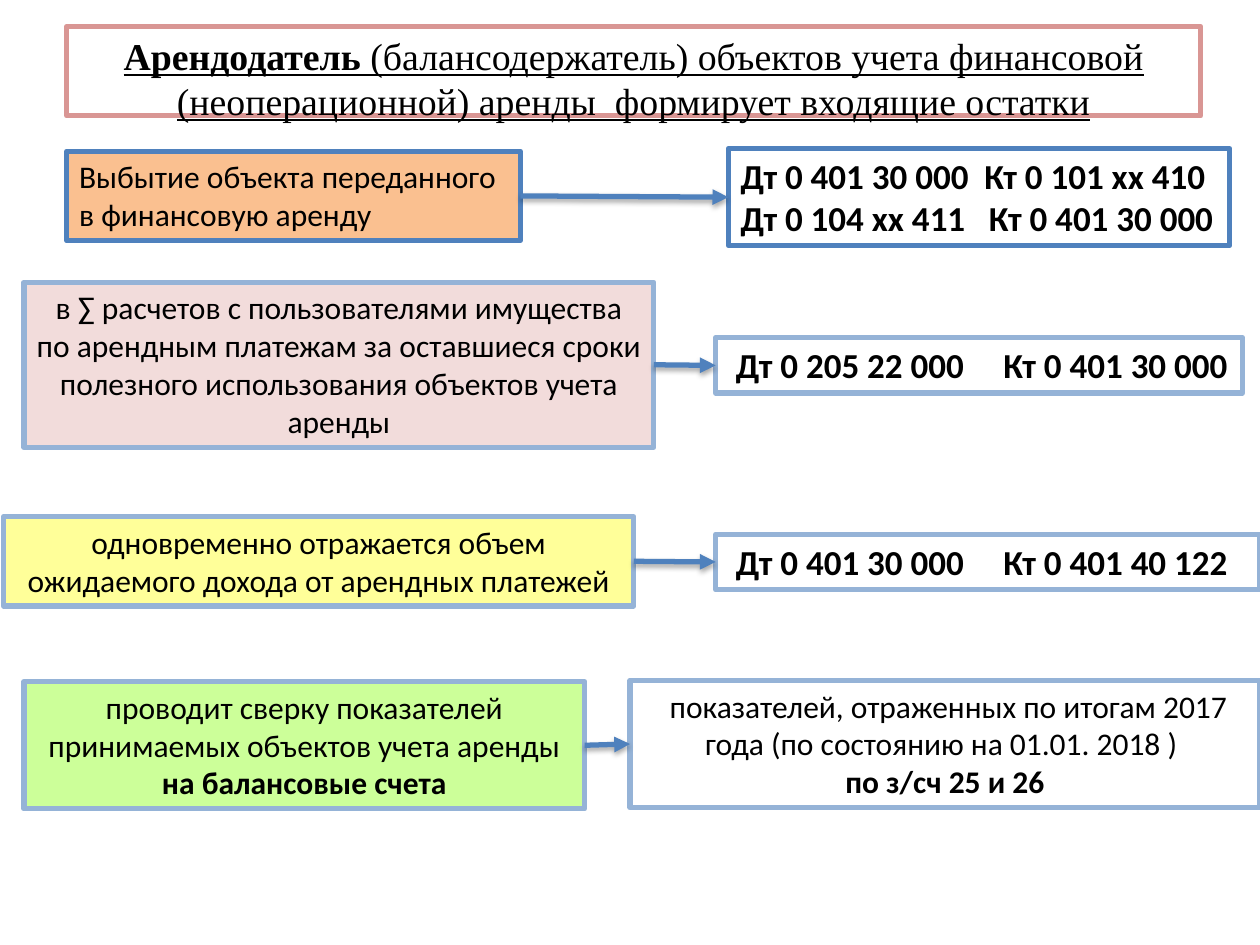
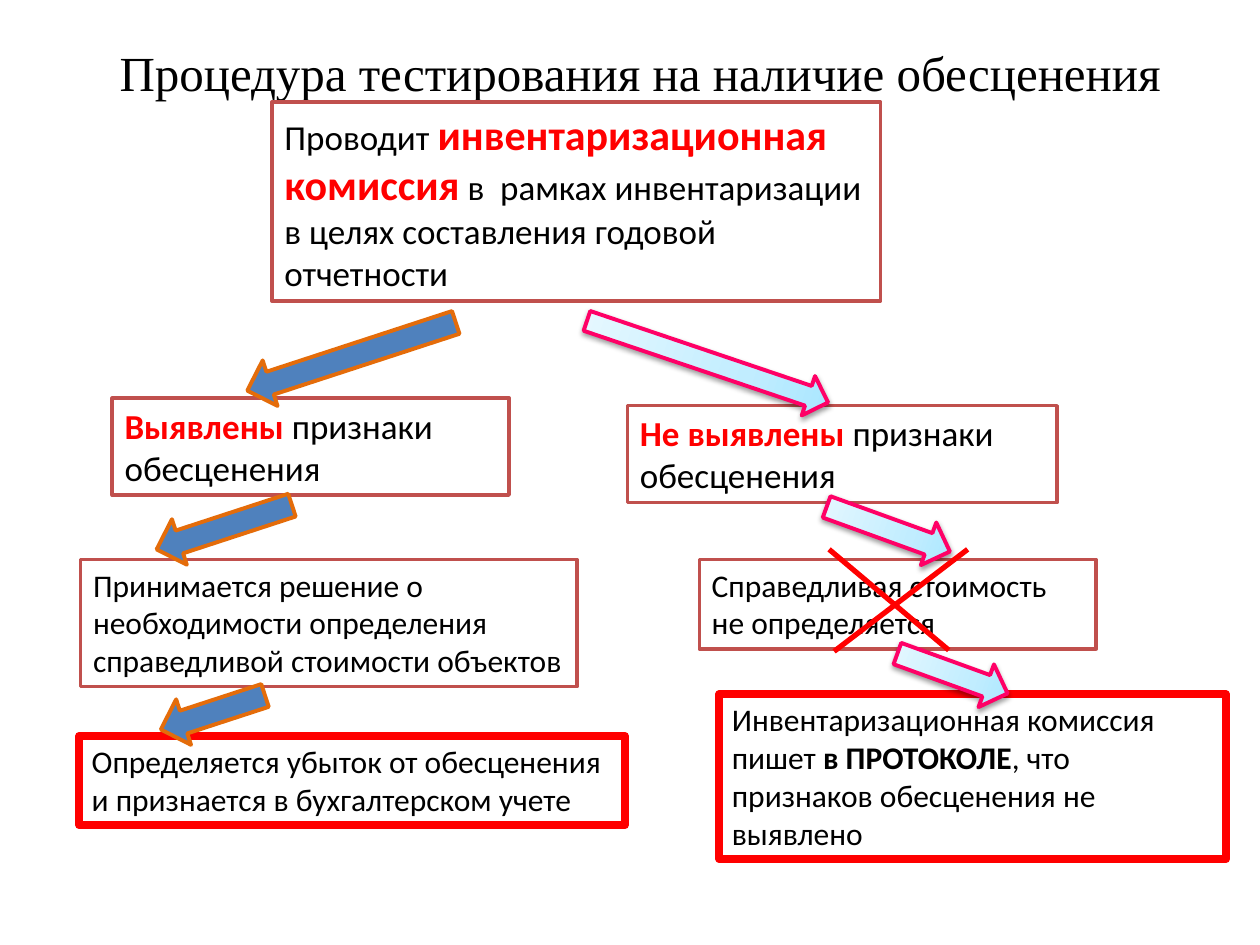
import lxml.etree
import pptx
import pptx.dml.color
import pptx.enum.shapes
import pptx.enum.text
import pptx.oxml.ns
import pptx.util

SLIDE_WIDTH = pptx.util.Inches(10)
SLIDE_HEIGHT = pptx.util.Inches(7.5)
COLUMN = SLIDE_WIDTH / 100
ROW = SLIDE_HEIGHT / 75

BODY_FONT, TITLE_FONT = "Calibri", "Times New Roman"
BLACK, WHITE, RED = "000000", "FFFFFF", "FF0000"
BLUE, PALE_BLUE, ROSE, BRICK = "4F81BD", "95B3D7", "D99694", "C0504D"
ORANGE, PINK = "E46C0A", "FF0066"
SKY_STOPS = ((0, "A7E6FF"), (35, "C1EDFF"), (100, "E7F8FF"))

# Run formats: bold and colour, with an optional size
STRONG = {"bold": True}
ALERT = {"bold": True, "color": RED}
BIG_ALERT = {"bold": True, "color": RED, "size": 24}

CENTER = pptx.enum.text.PP_ALIGN.CENTER
LEFT = pptx.enum.text.PP_ALIGN.LEFT
qn = pptx.oxml.ns.qn


def rgb(color):
    return pptx.dml.color.RGBColor.from_string(color)


def columns(count):
    return round(count * COLUMN)


def rows(count):
    return round(count * ROW)


def frame(place):
    """Turn (column, row, width, height) into lengths."""
    left, top, width, height = place
    return columns(left), rows(top), columns(width), rows(height)


def set_fill(shape, color):
    if color:
        shape.fill.solid()
        shape.fill.fore_color.rgb = rgb(color)
    else:
        shape.fill.background()


def set_line(shape, color, width):
    shape.line.color.rgb = rgb(color)
    shape.line.width = pptx.util.Pt(width)


def set_gradient(shape, stops):
    shape.fill.gradient()
    shape.fill.gradient_angle = 90
    stop_list = shape.element.spPr.find(".//" + qn("a:gsLst"))
    stop_list.clear()
    for position, color in stops:
        stop = lxml.etree.SubElement(stop_list, qn("a:gs"), pos=str(position * 1000))
        lxml.etree.SubElement(stop, qn("a:srgbClr"), val=color)


def set_effects(shape, shadow, opacity=35, distance=1.8):
    """Give a shape its own effect list, with a soft shadow below if asked."""
    properties = shape.element.spPr
    for old_list in properties.findall(qn("a:effectLst")):
        properties.remove(old_list)
    effects = lxml.etree.SubElement(properties, qn("a:effectLst"))
    if shadow:
        outer = lxml.etree.SubElement(
            effects, qn("a:outerShdw"), blurRad=str(pptx.util.Pt(3.1)),
            dist=str(pptx.util.Pt(distance)), dir="5400000", rotWithShape="0")
        color = lxml.etree.SubElement(outer, qn("a:srgbClr"), val=BLACK)
        lxml.etree.SubElement(color, qn("a:alpha"), val=str(opacity * 1000))


def write_text(shape, paragraphs, size, align=LEFT, font=BODY_FONT, bold=False,
               underline=False, wrap=True):
    """Each paragraph is a list of plain strings or (string, format) pairs."""
    text_frame = shape.text_frame
    text_frame.auto_size = pptx.enum.text.MSO_AUTO_SIZE.NONE
    text_frame.word_wrap = wrap
    text_frame.vertical_anchor = pptx.enum.text.MSO_ANCHOR.TOP
    for index, parts in enumerate(paragraphs):
        paragraph = text_frame.add_paragraph() if index else text_frame.paragraphs[0]
        paragraph.alignment = align
        paragraph.font.name = font
        paragraph.font.size = pptx.util.Pt(size)
        paragraph.font.bold = bold
        paragraph.font.underline = underline
        paragraph.font.color.rgb = rgb(BLACK)
        for part in parts:
            text, style = (part, {}) if isinstance(part, str) else part
            run = paragraph.add_run()
            run.text = text
            if "bold" in style:
                run.font.bold = style["bold"]
            if "color" in style:
                run.font.color.rgb = rgb(style["color"])
            if "size" in style:
                run.font.size = pptx.util.Pt(style["size"])


def add_titled_slide(presentation, place, parts, size, underline=False):
    slide = presentation.slides.add_slide(presentation.slide_layouts[5])
    title = slide.shapes.title
    title.left, title.top, title.width, title.height = frame(place)
    write_text(title, [parts], size, CENTER, TITLE_FONT, underline=underline)
    return slide


def add_box(slide, place, paragraphs, size=18, fill=None, line=PALE_BLUE,
            line_width=3, **text_options):
    box = slide.shapes.add_shape(
        pptx.enum.shapes.MSO_SHAPE.RECTANGLE, *frame(place))
    box.shadow.inherit = False
    set_fill(box, fill)
    set_line(box, line, line_width)
    write_text(box, paragraphs, size, **text_options)
    return box


def add_line(slide, start, end, color, shadow=False):
    line = slide.shapes.add_connector(
        pptx.enum.shapes.MSO_CONNECTOR.STRAIGHT,
        columns(start[0]), rows(start[1]), columns(end[0]), rows(end[1]))
    set_line(line, color, 3)
    set_effects(line, shadow)
    return line


def join_boxes(slide, source, target):
    arrow = add_line(slide, (0, 0), (1, 1), BLUE, shadow=True)
    arrow.begin_connect(source, 3)
    arrow.end_connect(target, 1)
    lxml.etree.SubElement(arrow.line._get_or_add_ln(), qn("a:tailEnd"), type="triangle")


def add_block_arrow(slide, place, rotation, line, stops=None):
    """A turned down arrow: blue, or with a gradient and a shadow."""
    arrow = slide.shapes.add_shape(
        pptx.enum.shapes.MSO_SHAPE.DOWN_ARROW, *frame(place))
    arrow.rotation = rotation
    if stops:
        set_gradient(arrow, stops)
    else:
        set_fill(arrow, BLUE)
    set_line(arrow, line, 2.25)
    set_effects(arrow, shadow=bool(stops), opacity=38, distance=1.6)


def build_entries_slide(presentation):
    place = (5.3, 2.1, 90, 7.1)
    slide = add_titled_slide(
        presentation, place,
        [("Арендодатель", STRONG),
         " (балансодержатель) объектов учета финансовой (неоперационной) аренды  "
         "формирует входящие остатки"],
        21.6, underline=True)
    set_line(slide.shapes.title, ROSE, 3)

    # Each operation on the left leads to its entry on the right
    operations = [
        add_box(slide, (5.3, 12, 36, 7.1),
                [["Выбытие объекта переданного в финансовую аренду"]],
                fill="FAC090", line=BLUE),
        add_box(slide, (1.9, 22.4, 50, 13.1),
                [["в ∑ расчетов с пользователями имущества по арендным платежам за "
                  "оставшиеся сроки полезного использования объектов учета аренды"]],
                fill="F2DCDB", align=CENTER),
        add_box(slide, (0.3, 41, 50, 7.1),
                [["одновременно отражается объем ожидаемого дохода от арендных платежей"]],
                fill="FFFF99", align=CENTER),
        add_box(slide, (1.9, 54.1, 44.5, 10.1),
                [["проводит сверку показателей принимаемых объектов учета аренды ",
                  ("на балансовые счета", STRONG)]],
                fill="CCFF99", align=CENTER),
    ]
    entries = [
        add_box(slide, (57.8, 11.8, 39.8, 7.7),
                [["Дт 0 401 30 000  Кт 0 101 хх 410"],
                 ["Дт 0 104 хх 411   Кт 0 401 30 000"]],
                size=20, line=BLUE, bold=True, wrap=False),
        add_box(slide, (56.8, 26.8, 41.8, 4.4),
                [[" Дт 0 205 22 000     Кт 0 401 30 000"]], size=20, bold=True),
        add_box(slide, (56.8, 42.4, 43.2, 4.4),
                [[" Дт 0 401 30 000     Кт 0 401 40 122"]], size=20, bold=True),
        add_box(slide, (50, 54, 50, 10.1),
                [[" показателей, отраженных по итогам 2017 года "
                  "(по состоянию на 01.01. 2018 ) "],
                 [("по з/сч 25 и 26", STRONG)]], align=CENTER),
    ]
    for operation, entry in zip(operations, entries):
        join_boxes(slide, operation, entry)


def build_impairment_slide(presentation):
    slide = add_titled_slide(
        presentation, (7.5, 2.9, 86.6, 4.1),
        ["Процедура тестирования на наличие обесценения"], 28)

    # Steps of the procedure: place, text size, runs
    steps = [
        ((21.6, 8.1, 48.3, 15.8), 20,
         ["Проводит ", ("инвентаризационная комиссия", BIG_ALERT),
          " в  рамках инвентаризации в целях составления годовой отчетности"]),
        ((8.9, 31.6, 31.5, 7.7), 20,
         [("Выявлены", ALERT), " признаки обесценения"]),
        ((49.8, 32.2, 34.1, 7.7), 20,
         [("Не выявлены ", ALERT), "признаки обесценения"]),
        ((6.4, 44.4, 39.4, 10.1), 18,
         ["Принимается решение о необходимости определения справедливой "
          "стоимости объектов"]),
        ((55.5, 44.4, 31.5, 7.1), 18,
         ["Справедливая стоимость не определяется"]),
    ]
    for place, size, parts in steps:
        add_box(slide, place, [parts], size, WHITE, BRICK, 2)

    # Outcomes of both branches
    outcomes = [
        ((6.3, 58.4, 43.3, 7.1),
         ["Определяется убыток от обесценения и признается в бухгалтерском учете"]),
        ((57.1, 55.1, 40.2, 13.1),
         ["Инвентаризационная комиссия пишет ", ("в ПРОТОКОЛЕ", STRONG),
          ", что признаков обесценения не выявлено"]),
    ]
    for place, parts in outcomes:
        add_box(slide, place, [parts], 18, WHITE, RED, 4.5)

    # Arrows of the left and right branches
    for place in ((26, 19.6, 3.8, 17.4), (15.9, 36.2, 3.8, 11.3), (15, 52.2, 3.8, 8.7)):
        add_block_arrow(slide, place, 71.9, ORANGE)
    for place, rotation in (((54.5, 18.6, 3.3, 20.2), 288.7),
                            ((68.7, 36.8, 3.6, 10.4), 289.9),
                            ((73.8, 48.8, 3.6, 9.3), 289.9)):
        add_block_arrow(slide, place, rotation, PINK, SKY_STOPS)

    # Cross over the step that is skipped
    add_line(slide, (76.8, 43.6), (66.2, 51.7), RED)
    add_line(slide, (65.8, 43.6), (75.3, 51.6), RED)


def main():
    presentation = pptx.Presentation()
    presentation.slide_width = SLIDE_WIDTH
    presentation.slide_height = SLIDE_HEIGHT
    build_entries_slide(presentation)
    build_impairment_slide(presentation)
    presentation.save("out.pptx")


if __name__ == "__main__":
    main()
